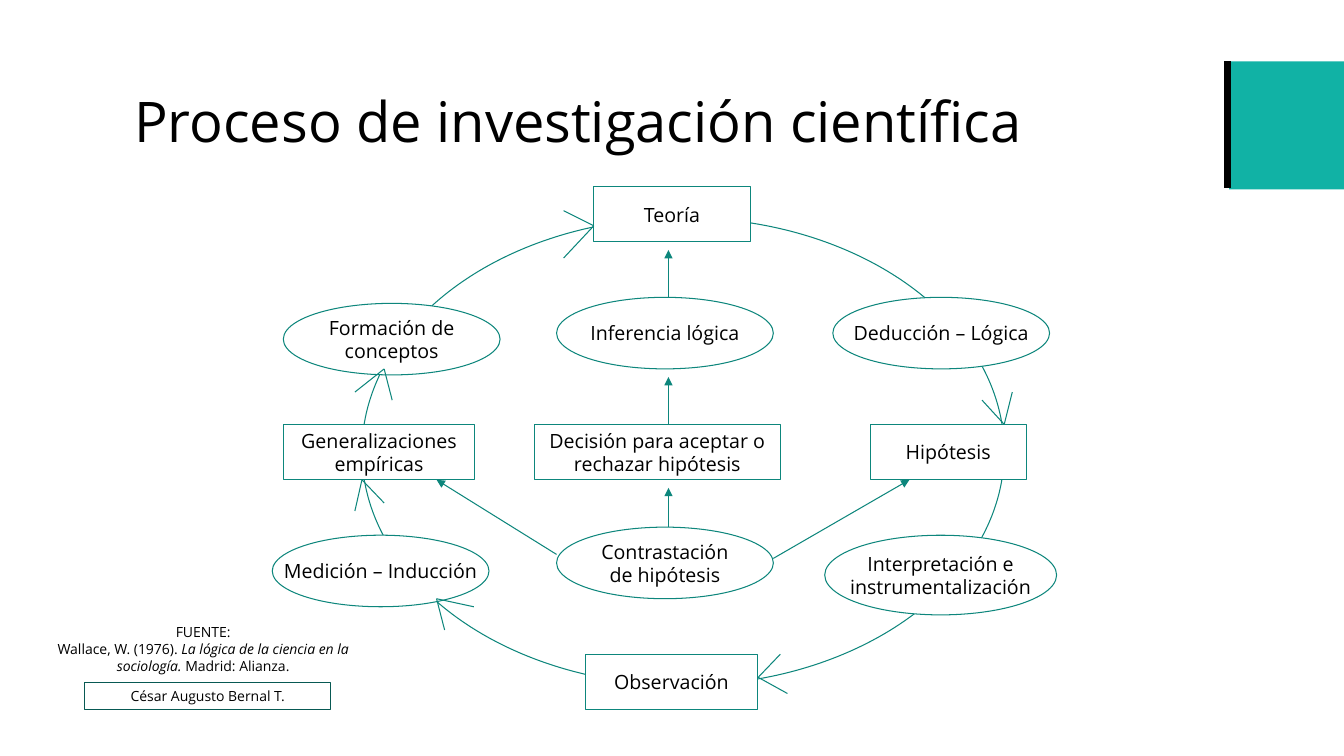
from pptx import Presentation
from pptx.dml.color import RGBColor
from pptx.enum.shapes import MSO_CONNECTOR as Conn, MSO_SHAPE as Kind
from pptx.enum.text import MSO_ANCHOR as Anchor, PP_ALIGN as Align
from pptx.oxml.ns import qn
from pptx.util import Inches, Pt
from lxml import etree

# Content
FONT = "Open Sans"
COLORS = {"teal": "11B2A5", "line": "0D867C", "dark": "085953",
          "black": "000000", "white": "FFFFFF"}
TITLE = "Proceso de investigación científica"
SOURCE = [("FUENTE:\vWallace, W. (1976). ", False),
          ("La lógica de la ciencia en la sociología. ", True),
          ("Madrid: Alianza.", False)]
AUTHOR = "César Augusto Bernal T."

# Boxes: lines of text, left, top, width
BOX_H = 0.55
BOXES = [
    (["Teoría"], 5.89, 1.85, 1.55),
    (["Generalizaciones", "empíricas"], 2.81, 4.21, 1.9),
    (["Decisión para aceptar o", "rechazar hipótesis"], 5.3, 4.21, 2.44),
    (["Observación"], 5.81, 6.49, 1.7),
    (["Hipótesis"], 8.63, 4.21, 1.55),
]
# Ovals: lines of text, left, top, width, height
OVALS = [
    (["Formación de", "conceptos"], 2.81, 3.01, 2.15, 0.71),
    (["Deducción – Lógica"], 8.26, 2.95, 2.15, 0.71),
    (["Inferencia lógica"], 5.52, 2.95, 2.15, 0.71),
    (["Contrastación", "de hipótesis"], 5.52, 5.23, 2.15, 0.71),
    (["Medición – Inducción"], 2.7, 5.31, 2.15, 0.71),
    (["Interpretación e", "instrumentalización"], 8.18, 5.31, 2.3, 0.79),
]
# Arrows: start, end
MID = 6.63
ARROWS = [
    ((5.52, 5.5), (4.33, 4.76)),
    ((7.67, 5.54), (9.02, 4.76)),
    ((MID, 5.23), (MID, 4.84)),
    ((MID, 4.21), (MID, 3.74)),
    ((MID, 2.95), (MID, 2.48)),
]
# Open heads on the ring: tip, ends of the two barbs
HEADS = [
    ((3.81, 3.66), (3.89, 3.97), (3.52, 3.89)),
    ((5.89, 2.24), (5.59, 2.09), (5.59, 2.56)),
    ((9.96, 4.21), (10.04, 3.89), (9.74, 3.97)),
    ((7.52, 6.72), (7.74, 6.49), (7.81, 6.88)),
    ((4.33, 5.94), (4.41, 6.25), (4.7, 6.02)),
    ((3.59, 4.76), (3.52, 5.07), (3.81, 4.99)),
]

deck = Presentation()
deck.slide_width, deck.slide_height = Inches(13.33), Inches(7.5)
slide = deck.slides.add_slide(deck.slide_layouts[6])
shapes = slide.shapes


def color(name):
    return RGBColor.from_string(COLORS[name])


def style(para, size, align=Align.CENTER):
    para.alignment = align
    font = para.font
    font.name, font.size, font.color.rgb = FONT, Pt(size), color("black")


def add_text(shape, lines, size, wrap=False):
    frame = shape.text_frame
    frame.word_wrap = wrap
    frame.vertical_anchor = Anchor.MIDDLE
    frame.text = "\n".join(lines)
    for para in frame.paragraphs:
        style(para, size)


def add_shape(kind, area, fill="white", line="line"):
    shape = shapes.add_shape(kind, *map(Inches, area))
    shape.shadow.inherit = False
    shape.fill.solid()
    shape.fill.fore_color.rgb = color(fill)
    if line:
        shape.line.color.rgb = color(line)
        shape.line.width = Pt(0.75)
    else:
        shape.line.fill.background()
    return shape


def add_line(start, end, name="line", width=0.75, head=False):
    link = shapes.add_connector(Conn.STRAIGHT, *map(Inches, start + end))
    link.line.color.rgb = color(name)
    link.line.width = Pt(width)
    if head:
        tail = etree.SubElement(link.line._get_or_add_ln(), qn("a:tailEnd"))
        tail.set("type", "triangle")
    etree.SubElement(link._element.spPr, qn("a:effectLst"))


# Corner mark
add_shape(Kind.RECTANGLE, (12.19, 0.61, 1.14, 1.27), "teal", None)
add_line((12.17, 0.61), (12.17, 1.87), "black", 5)

# Title
frame = shapes.add_textbox(*map(Inches, (1.09, 0.62, 10.9, 1.22))).text_frame
frame.word_wrap = True
frame.vertical_anchor = Anchor.MIDDLE
frame.margin_left = Inches(0.24)
frame.text = TITLE
style(frame.paragraphs[0], 40, Align.LEFT)
frame.paragraphs[0].line_spacing = 0.9

# Source
frame = shapes.add_textbox(*map(Inches, (0.44, 6.14, 3.15, 0.61))).text_frame
frame.word_wrap = True
para = frame.paragraphs[0]
style(para, 10)
for part, slant in SOURCE:
    head, *rest = part.split("\v")
    para.add_run().text = head
    for text in rest:
        para.add_line_break()
        para.add_run().text = text
    para.runs[-1].font.italic = slant

# Ring with its boxes and ovals
add_shape(Kind.OVAL, (3.59, 2.16, 6.37, 4.64))
for lines, left, top, width in BOXES:
    add_text(add_shape(Kind.RECTANGLE, (left, top, width, BOX_H)), lines, 14)
for lines, *area in OVALS:
    add_text(add_shape(Kind.OVAL, area), lines, 14)

# Arrows and open heads
for start, end in ARROWS:
    add_line(start, end, head=True)
for tip, *barbs in HEADS:
    for barb in barbs:
        add_line(tip, barb)

# Author
author = add_shape(Kind.RECTANGLE, (0.84, 6.77, 2.44, 0.27), line="dark")
add_text(author, [AUTHOR], 10, wrap=True)

deck.save("out.pptx")
